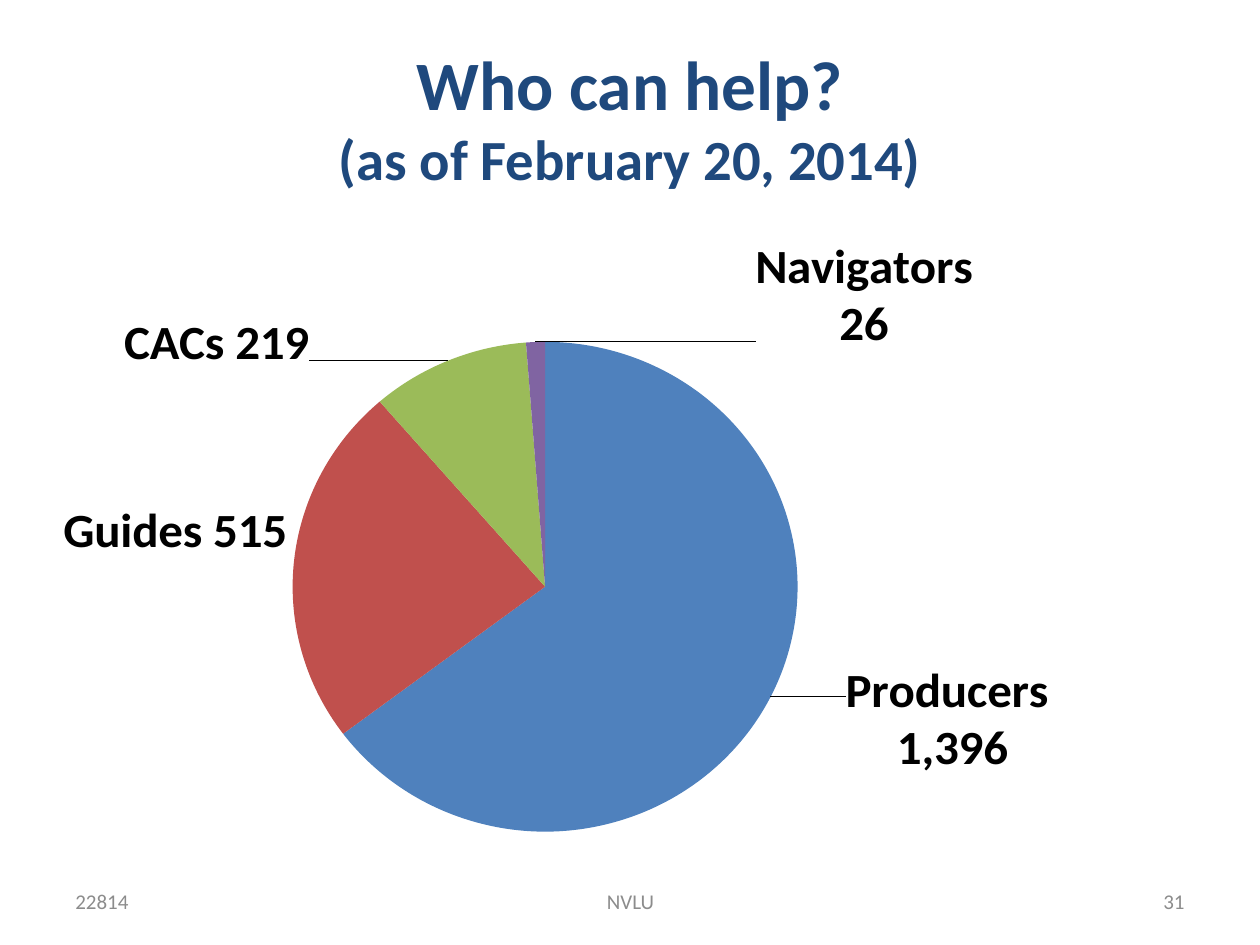
"""Build the "Who can help?" slide with its pie chart of helpers."""
from lxml.etree import SubElement
from pptx import Presentation
from pptx.chart.data import CategoryChartData
from pptx.dml.color import RGBColor
from pptx.enum.chart import XL_CHART_TYPE, XL_LABEL_POSITION
from pptx.enum.text import MSO_ANCHOR, PP_ALIGN
from pptx.oxml.ns import qn
from pptx.util import Inches, Pt

WIDE, HIGH = 10, 7.5
FACE = "Calibri"
TITLE = [("Who can help?", 39.6), ("(as of February 20, 2014)", 32.4)]
HELP = [
    ("Producers ", 1396, "4F81BD", (0.06, -0.06), True),
    ("Guides", 515, "C0504D", (0, 0), False),
    ("CACs", 219, "9BBB59", (-0.12, 0.03), True),
    ("Navigators", 26, "8064A2", (0.29, 0.03), True),
]
PLOT = {"x": 0.2, "y": 0.17, "w": 0.45, "h": 0.81}
FOOT = [
    ("22814", 0.05, 0.233, PP_ALIGN.LEFT),
    ("NVLU", 0.342, 0.317, PP_ALIGN.CENTER),
    ("31", 0.717, 0.233, PP_ALIGN.RIGHT),
]


def box(x, y, w, h):
    return Inches(x * WIDE), Inches(y * HIGH), Inches(w * WIDE), Inches(h * HIGH)


def style(font, size, color, bold=False):
    font.name, font.size, font.bold = FACE, Pt(size), bold
    font.color.rgb = RGBColor.from_string(color)


def layout(parent, spot, vals):
    for old in parent.findall(qn("c:layout")):
        parent.remove(old)
    node = SubElement(parent, qn("c:layout"))
    parent.insert(spot, node)
    manual = SubElement(node, qn("c:manualLayout"))
    for tag, val in vals.items():
        SubElement(manual, qn("c:" + tag)).set("val", str(val))


def add_title(slide):
    title = slide.shapes.title
    title.left, title.top, title.width, title.height = box(0.05, 0.04, 0.9, 0.167)
    frame = title.text_frame
    frame.word_wrap, frame.vertical_anchor = True, MSO_ANCHOR.MIDDLE
    para = frame.paragraphs[0]
    para.alignment = PP_ALIGN.CENTER
    for row, (text, size) in enumerate(TITLE):
        if row:
            para.add_line_break()
        run = para.add_run()
        run.text = text
        style(run.font, size, "1F497D", True)


def add_label(label, text, spot, wrap):
    frame = label.text_frame
    frame.word_wrap = wrap
    run = frame.paragraphs[0].add_run()
    run.text = text
    style(run.font, 28, "000000", True)
    label.position = XL_LABEL_POSITION.OUTSIDE_END
    node = frame._txBody.getparent().getparent()
    node.find(qn("c:showCatName")).set("val", "1")
    layout(node, 1, dict(zip("xy", spot)))


def add_pie(slide):
    data = CategoryChartData()
    data.categories = [name for name, *_ in HELP]
    data.add_series("Series 1", [count for _, count, *_ in HELP])
    area = box(0.05, 0.233, 0.9, 0.66)
    chart = slide.shapes.add_chart(XL_CHART_TYPE.PIE, *area, data).chart
    chart.has_legend = chart.has_title = False
    style(chart.font, 18, "000000")
    pie = chart.plots[0]
    pie.vary_by_categories = True
    series = pie.series[0]
    labels = series.data_labels
    labels.show_value = labels.show_category_name = True
    style(labels.font, 28, "000000", True)
    for row, (name, count, color, spot, wrap) in enumerate(HELP):
        point = series.points[row]
        point.format.fill.solid()
        point.format.fill.fore_color.rgb = RGBColor.from_string(color)
        add_label(point.data_label, f"{name} {count:,}", spot, wrap)
    plot = chart._chartSpace.find(".//" + qn("c:plotArea"))
    modes = {"layoutTarget": "inner", "xMode": "edge", "yMode": "edge"}
    layout(plot, 0, modes | PLOT)


def add_foot(slide):
    for text, x, w, side in FOOT:
        frame = slide.shapes.add_textbox(*box(x, 0.927, w, 0.053)).text_frame
        frame.word_wrap, frame.vertical_anchor = True, MSO_ANCHOR.MIDDLE
        para = frame.paragraphs[0]
        para.text, para.alignment = text, side
        style(para.font, 12, "8C8C8C")


def main():
    deck = Presentation()
    deck.slide_width, deck.slide_height = Inches(WIDE), Inches(HIGH)
    slide = deck.slides.add_slide(deck.slide_layouts[5])
    add_title(slide)
    add_pie(slide)
    add_foot(slide)
    deck.save("out.pptx")


if __name__ == "__main__":
    main()
